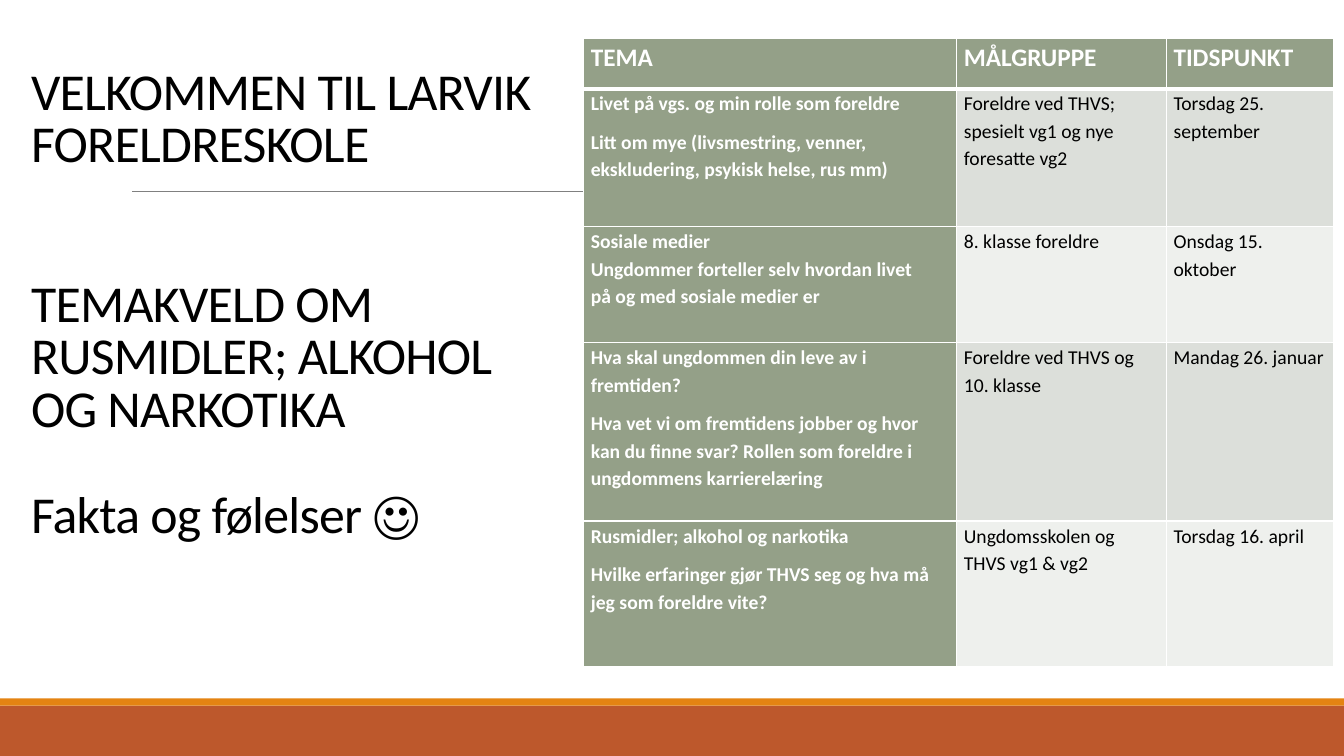
"""Build the parent school welcome slide with its programme table."""
from lxml.etree import SubElement
from pptx import Presentation
from pptx.dml.color import RGBColor as Color
from pptx.enum.shapes import MSO_CONNECTOR as Connector, MSO_SHAPE as Shape
from pptx.enum.text import MSO_ANCHOR as Anchor
from pptx.oxml.ns import qn
from pptx.util import Inches, Pt

TITLE = [
    ("VELKOMMEN TIL LARVIK FORELDRESKOLE", 0),
    ("TEMAKVELD OM RUSMIDLER; ALKOHOL OG NARKOTIKA", 76),
    ("Fakta og følelser ☺", 38),
]
PROGRAMME = [
    (["TEMA"], ["MÅLGRUPPE"], ["TIDSPUNKT"]),
    (["Livet på vgs. og min rolle som foreldre",
      "Litt om mye (livsmestring, venner, ekskludering, psykisk helse, rus mm)"],
     ["Foreldre ved THVS; \vspesielt vg1 og nye \vforesatte vg2"],
     ["Torsdag 25. september"]),
    (["Sosiale medier\vUngdommer forteller selv hvordan livet \vpå og med sosiale medier er"],
     ["8. klasse foreldre"],
     ["Onsdag 15. oktober"]),
    (["Hva skal ungdommen din leve av i fremtiden?",
      "Hva vet vi om fremtidens jobber og hvor \vkan du finne svar? "
      "Rollen som foreldre i ungdommens karrierelæring"],
     ["Foreldre ved THVS og \v10. klasse"],
     ["Mandag 26. januar"]),
    (["Rusmidler; alkohol og narkotika",
      "Hvilke erfaringer gjør THVS seg og hva må jeg som foreldre vite?"],
     ["Ungdomsskolen og \vTHVS vg1 & vg2"],
     ["Torsdag 16. april"]),
]
COLUMNS = [3.7, 2.08, 1.66]
ROWS = [0.5, 1.37, 1.15, 1.77, 1.44]
BANDS = [("band", 7, 0.5), ("stripe", 6.93, 0.07)]
THEME = {
    "font": "Calibri", "title": 37, "header": 18, "body": 14,
    "text": "000000", "white": "FFFFFF", "rule": "808080",
    "band": "BD582C", "stripe": "E48312",
    "sage": "94A088", "odd": "DCDFDA", "even": "EEF0ED",
}


def color(name):
    return Color.from_string(THEME[name])


def apply(target, values):
    for name, value in values.items():
        setattr(target, name, value)


def write(para, text, size, ink, bold, layout):
    para.text = text
    apply(para, layout)
    for span in para.runs:
        apply(span.font, {"name": THEME["font"], "size": Pt(THEME[size]), "bold": bold})
        span.font.color.rgb = color(ink)


def paragraphs(frame, count):
    return [frame.paragraphs[0]] + [frame.add_paragraph() for _ in range(count - 1)]


def add_bands(page, width):
    for name, top, height in BANDS:
        bar = page.shapes.add_shape(Shape.RECTANGLE, 0, Inches(top), width, Inches(height))
        bar.shadow.inherit = False
        bar.fill.solid()
        bar.fill.fore_color.rgb = color(name)
        bar.line.fill.background()


def add_rule(page):
    rule = page.shapes.add_connector(
        Connector.STRAIGHT, Inches(1.31), Inches(1.9), Inches(12.21), Inches(1.9))
    rule.line.color.rgb = color("rule")
    rule.line.width = Pt(0.5)
    SubElement(rule.element.spPr, qn("a:effectLst"))


def add_title(page):
    box = page.shapes.add_textbox(Inches(0.21), Inches(0.49), Inches(5.16), Inches(4.96))
    frame = box.text_frame
    apply(frame, {"word_wrap": True, "vertical_anchor": Anchor.BOTTOM, "margin_right": 0})
    for para, (text, gap) in zip(paragraphs(frame, len(TITLE)), TITLE):
        write(para, text, "title", "text", False,
              {"line_spacing": 0.85, "space_before": Pt(gap)})
        for span in para.runs:
            span.font._element.set("spc", "-50")


def add_borders(cell, row):
    widths = {"L": 1, "R": 1, "T": 3 if row == 1 else 1, "B": 3 if row == 0 else 1}
    properties = cell._tc.get_or_add_tcPr()
    for side, width in widths.items():
        line = SubElement(properties, qn(f"a:ln{side}"), w=str(Pt(width)))
        SubElement(SubElement(line, qn("a:solidFill")), qn("a:srgbClr"), val=THEME["white"])


def fill_cell(cell, texts, row, column):
    accent = row == 0 or column == 0
    shade = "sage" if accent else ("odd" if row % 2 else "even")
    add_borders(cell, row)
    cell.fill.solid()
    cell.fill.fore_color.rgb = color(shade)
    apply(cell, {"margin_left": Inches(0.07), "margin_right": Inches(0.07),
                 "margin_top": 0, "margin_bottom": 0})
    for para, text in zip(paragraphs(cell.text_frame, len(texts)), texts):
        write(para, text, "body" if row else "header", "white" if accent else "text",
              accent, {"line_spacing": 1.15, "space_after": Pt(8)})


def add_programme(page):
    table = page.shapes.add_table(
        len(ROWS), len(COLUMNS), Inches(5.79), Inches(0.38),
        Inches(sum(COLUMNS)), Inches(sum(ROWS))).table
    for column, width in zip(table.columns, COLUMNS):
        column.width = Inches(width)
    for row, height in zip(table.rows, ROWS):
        row.height = Inches(height)
    for row, entries in enumerate(PROGRAMME):
        for column, texts in enumerate(entries):
            fill_cell(table.cell(row, column), texts, row, column)


def main():
    deck = Presentation()
    apply(deck, {"slide_width": Inches(13.33), "slide_height": Inches(7.5)})
    page = deck.slides.add_slide(deck.slide_layouts[6])
    add_bands(page, deck.slide_width)
    add_rule(page)
    add_title(page)
    add_programme(page)
    deck.save("out.pptx")


if __name__ == "__main__":
    main()
